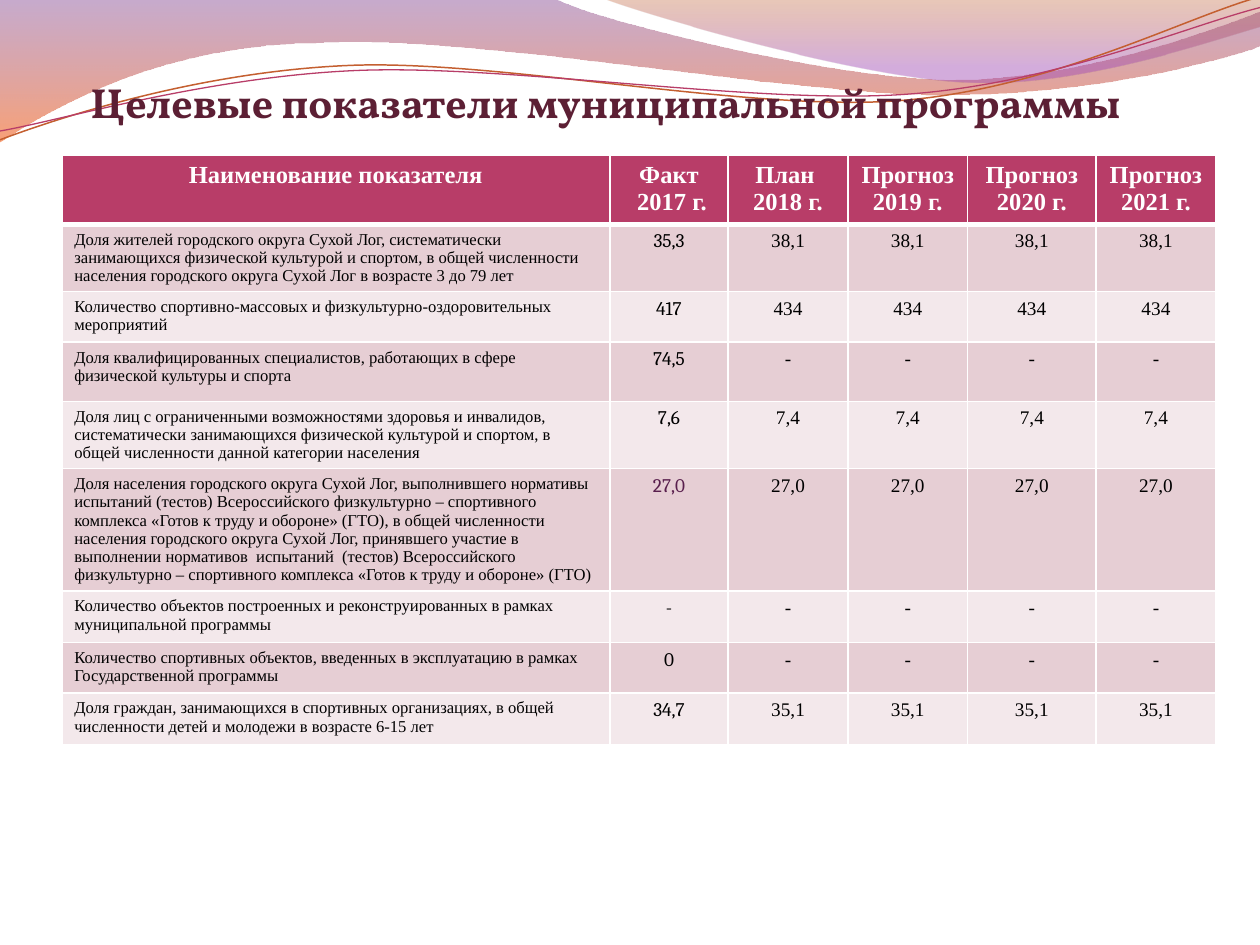
from dataclasses import dataclass

from lxml.etree import SubElement
from pptx import Presentation
from pptx.dml.color import RGBColor
from pptx.enum.text import MSO_ANCHOR as Anchor, PP_ALIGN as Align
from pptx.oxml.ns import qn
from pptx.util import Inches, Pt


@dataclass(frozen=True)
class Theme:
    white: str = "FFFFFF"
    ink: str = "000000"
    title: str = "5C1F34"
    accent: str = "B83D68"
    orange: str = "C45F30"
    plum: str = "591F4D"
    bands: tuple = ("E6CED4", "F3E8EB")
    left_wave: tuple = ((0, "834591", 45), (1, "F35307", 55))
    right_wave: tuple = ((0, "B74915", 30), (0.8, "A14BB4", 45))
    title_font: str = "Vollkorn"
    body_font: str = "Times New Roman"
    fact_font: str = "Cambria"
    title_size: float = 24
    head_size: float = 14
    value_size: float = 11
    label_size: float = 9.5


T = Theme()

LEFT_WAVE = [
    (0, -0.01), (4.4, -0.01),
    (4.76, 0.17, 6.64, 0.63, 7.58, 0.63), (8.53, 0.63, 9.58, 0.26, 10, 0.09),
    (10.01, 0.36),
    (9.83, 0.44, 8.7, 0.76, 7.46, 0.75), (6.22, 0.75, 3.82, 0.28, 2.57, 0.34),
    (1.29, 0.35, 0.46, 0.83, -0.01, 1.13),
]
RIGHT_WAVE = [
    (4.79, -0.01),
    (5.09, 0.11, 6.82, 0.62, 7.69, 0.65), (8.56, 0.69, 9.61, 0.32, 10, 0.21),
    (10, 0),
]
ORANGE_LINE = [
    (0, 1.11),
    (0.48, 0.93, 1.58, 0.57, 2.77, 0.52), (3.95, 0.47, 5.93, 0.89, 7.13, 0.8),
    (8.33, 0.71, 9.38, 0.15, 9.98, -0.02),
]
PINK_LINE = [
    (0, 1.04),
    (0.47, 0.96, 1.64, 0.61, 2.83, 0.56), (4.03, 0.51, 5.97, 0.83, 7.17, 0.75),
    (8.36, 0.67, 9.41, 0.21, 10, 0.06),
]

COLUMNS = [4.35, 0.94, 0.95, 0.95, 1.02, 0.95]
ROWS = [0.55, 0.41, 0.4, 0.47, 0.44, 0.41, 0.41, 0.4, 0.41]
HEADS = ["Наименование показателя", "Факт\n 2017 г.", "План \n2018 г."] + [
    f"Прогноз {year} г." for year in (2019, 2020, 2021)]
INDICATORS = [
    ("Доля жителей городского округа Сухой Лог, систематически занимающихся физической "
     "культурой и спортом, в общей численности населения городского округа Сухой Лог "
     "в возрасте 3 до 79 лет", "35,3", "38,1"),
    ("Количество спортивно-массовых и физкультурно-оздоровительных мероприятий",
     "417", "434"),
    ("Доля квалифицированных специалистов, работающих в сфере физической культуры "
     "и спорта", "74,5", "-"),
    ("Доля лиц с ограниченными возможностями здоровья и инвалидов, систематически "
     "занимающихся физической культурой и спортом, в общей численности данной "
     "категории населения", "7,6", "7,4"),
    ("Доля населения городского округа Сухой Лог, выполнившего нормативы испытаний "
     "(тестов) Всероссийского физкультурно – спортивного комплекса «Готов к труду и "
     "обороне» (ГТО), в общей численности населения городского округа Сухой Лог, "
     "принявшего участие в выполнении нормативов  испытаний  (тестов) Всероссийского "
     "физкультурно – спортивного комплекса «Готов к труду и обороне» (ГТО)",
     "27,0", "27,0"),
    ("Количество объектов построенных и реконструированных в рамках муниципальной "
     "программы", "-", "-"),
    ("Количество спортивных объектов, введенных в эксплуатацию в рамках "
     "Государственной программы", "0", "-"),
    ("Доля граждан, занимающихся в спортивных организациях, в общей численности "
     "детей и молодежи в возрасте 6-15 лет", "34,7", "35,1"),
]
FACT_COLORS = {"27,0": T.plum}


def rgb(color):
    return RGBColor.from_string(color)


def write(tf, text, size, font=T.body_font, color=T.ink, bold=False, align=Align.CENTER):
    for i, line in enumerate(text.split("\n")):
        p = tf.add_paragraph() if i else tf.paragraphs[0]
        p.alignment = align
        r = p.add_run()
        r.text = line
        r.font.size, r.font.name, r.font.bold = Pt(size), font, bold
        r.font.color.rgb = rgb(color)


def add_curve(s, segments, left, top, close):
    ends = [(Inches(left + seg[-2]), Inches(top + seg[-1])) for seg in segments]
    builder = s.shapes.build_freeform(*ends[0], scale=1.0)
    builder.add_line_segments(ends[1:], close=close)
    sp = builder.convert_to_shape()
    sp.shadow.inherit = False
    lines = list(sp._element.spPr.iter(qn("a:lnTo")))
    for line, seg in zip(lines, segments[1:]):
        if len(seg) == 6:
            line.tag = qn("a:cubicBezTo")
            controls = [line.makeelement(qn("a:pt"), {
                "x": str(Inches(left + x) - sp.left), "y": str(Inches(top + y) - sp.top)})
                for x, y in (seg[:2], seg[2:4])]
            line[:0] = controls
    return sp


def add_waves(s, left, top):
    for segments, stops in ((LEFT_WAVE, T.left_wave), (RIGHT_WAVE, T.right_wave)):
        sp = add_curve(s, segments, left, top, close=True)
        sp.line.fill.background()
        sp.fill.gradient()
        sp.fill.gradient_angle = 270
        for stop, (position, color, _) in zip(sp.fill.gradient_stops, stops):
            stop.position = position
            stop.color.rgb = rgb(color)
        for clr, (_, _, opacity) in zip(sp._element.spPr.iter(qn("a:srgbClr")), stops):
            SubElement(clr, qn("a:alpha"), val=str(opacity * 1000))
    for segments, color, width in ((ORANGE_LINE, T.orange, 0.85),
                                   (PINK_LINE, T.accent, 0.75)):
        sp = add_curve(s, segments, left, top, close=False)
        sp.fill.background()
        sp.line.color.rgb = rgb(color)
        sp.line.width = Pt(width)


def add_title(s, text, left, top, width, height):
    sp = s.shapes.title
    s.shapes._spTree.append(sp._element)
    sp.left, sp.top, sp.width, sp.height = map(Inches, (left, top, width, height))
    tf = sp.text_frame
    tf.word_wrap = True
    tf.vertical_anchor = Anchor.BOTTOM
    tf.margin_left = tf.margin_right = tf.margin_bottom = 0
    tf.margin_top = Inches(0.05)
    write(tf, text, T.title_size, font=T.title_font, color=T.title, bold=True)


def style_cell(cell, fill, bottom=1):
    tcPr = cell._tc.get_or_add_tcPr()
    for side, width in (("L", 1), ("R", 1), ("T", 1), ("B", bottom)):
        ln = SubElement(tcPr, qn(f"a:ln{side}"), w=str(Pt(width)))
        SubElement(SubElement(ln, qn("a:solidFill")), qn("a:srgbClr"), val=T.white)
    cell.fill.solid()
    cell.fill.fore_color.rgb = rgb(fill)


def add_indicators(s, left, top):
    box = map(Inches, (left, top, sum(COLUMNS), sum(ROWS)))
    table = s.shapes.add_table(len(ROWS), len(COLUMNS), *box).table
    for column, width in zip(table.columns, COLUMNS):
        column.width = Inches(width)
    for row, height in zip(table.rows, ROWS):
        row.height = Inches(height)
    for cell, text in zip(table.rows[0].cells, HEADS):
        style_cell(cell, T.accent, bottom=3)
        write(cell.text_frame, text, T.head_size, color=T.white, bold=True)
    for i, (label, fact, target) in enumerate(INDICATORS):
        cells = list(table.rows[i + 1].cells)
        for cell in cells:
            style_cell(cell, T.bands[i % 2])
        write(cells[0].text_frame, label, T.label_size, align=Align.LEFT)
        write(cells[1].text_frame, fact, T.value_size, font=T.fact_font,
              color=FACT_COLORS.get(fact, T.ink))
        for cell in cells[2:]:
            write(cell.text_frame, target, T.value_size)


def main():
    prs = Presentation()
    prs.slide_width, prs.slide_height = Inches(10), Inches(7.5)
    s = prs.slides.add_slide(prs.slide_layouts[5])
    s.background.fill.solid()
    s.background.fill.fore_color.rgb = rgb(T.white)
    add_waves(s, 0, 0)
    add_title(s, "Целевые показатели муниципальной программы", 0.59, 0.63, 8.43, 0.38)
    add_indicators(s, 0.49, 1.23)
    prs.save("out.pptx")


if __name__ == "__main__":
    main()
